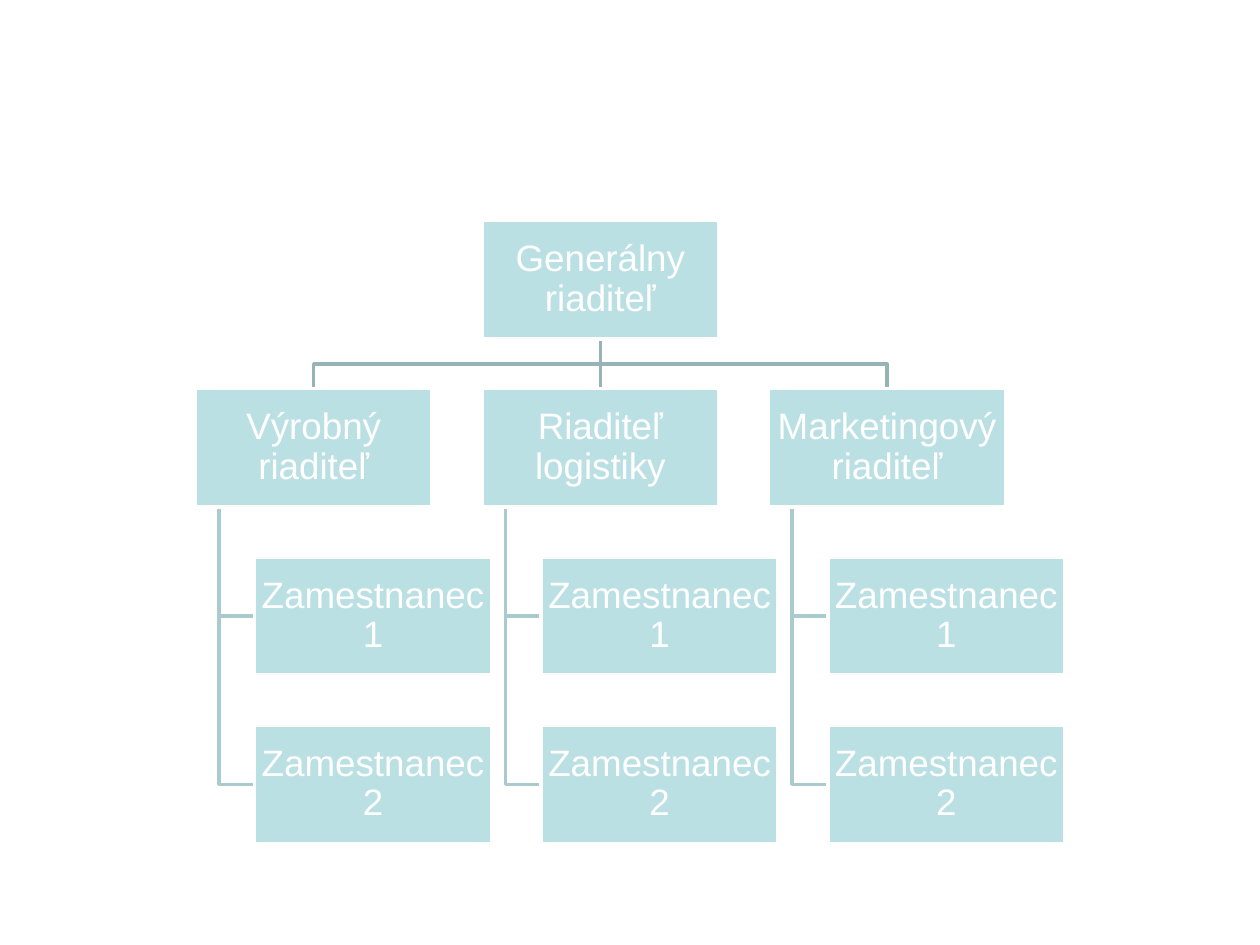
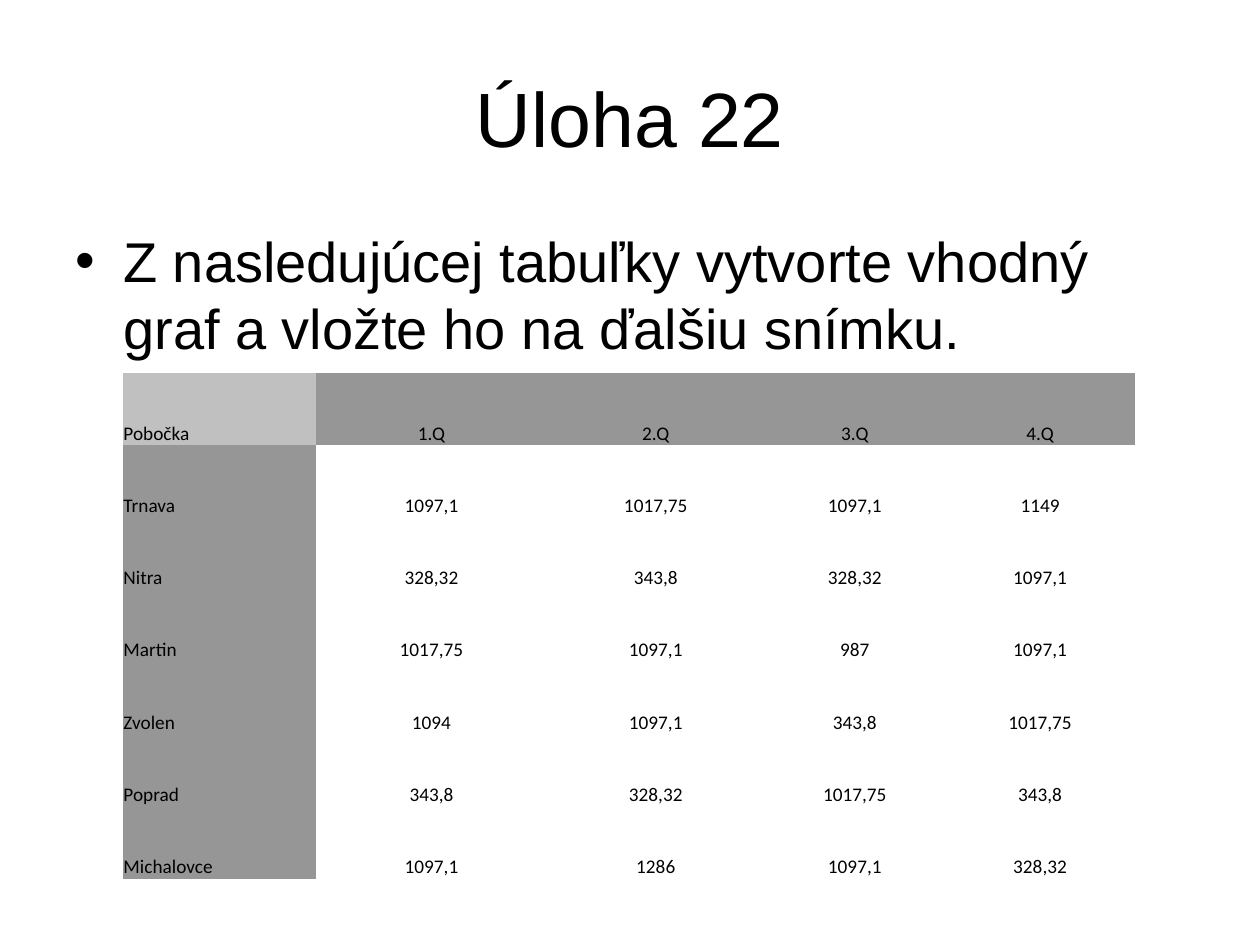
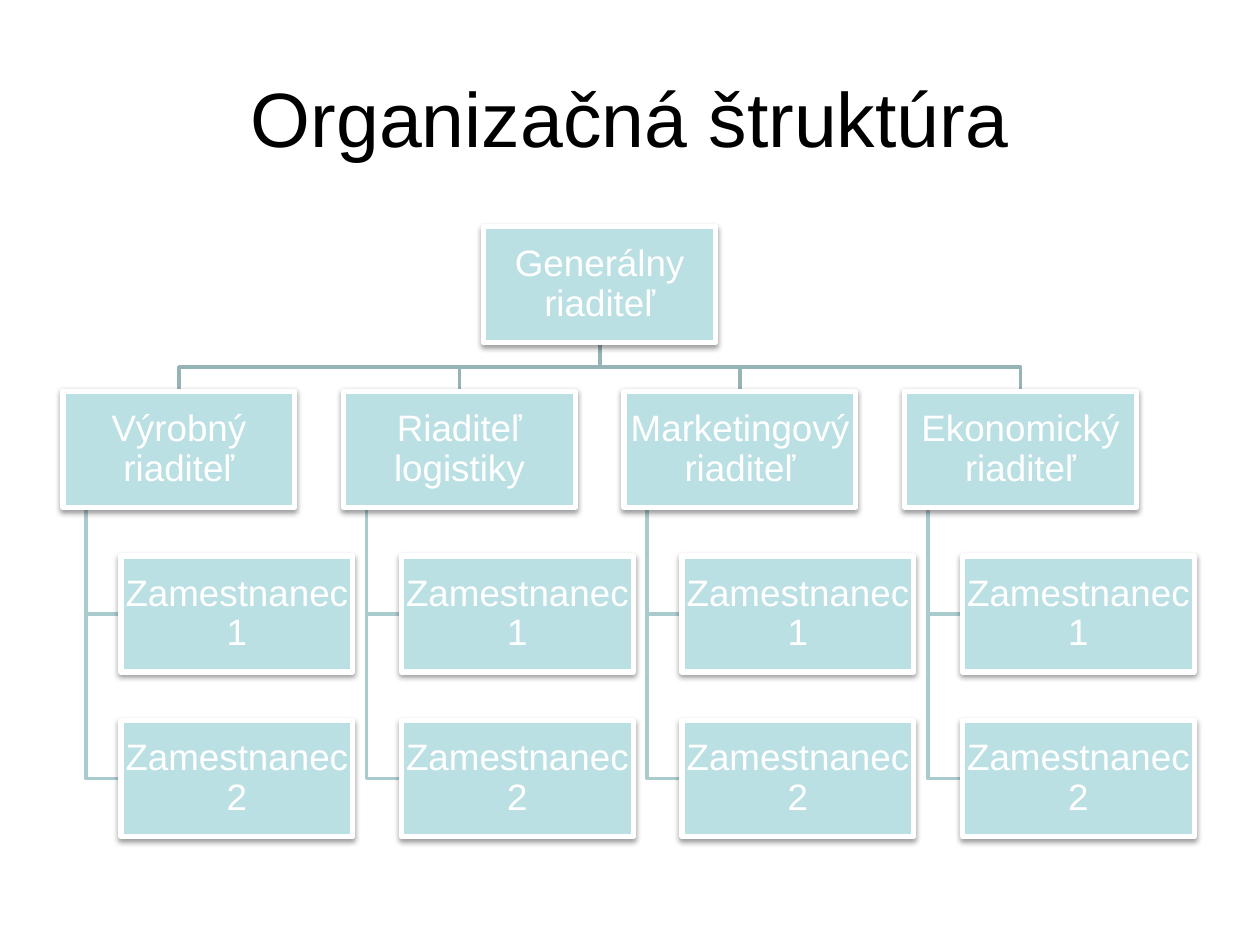
from lxml import etree
from pptx import Presentation
from pptx.dml.color import RGBColor
from pptx.enum.shapes import MSO_CONNECTOR, MSO_SHAPE
from pptx.enum.text import MSO_ANCHOR, MSO_AUTO_SIZE, PP_ALIGN
from pptx.oxml.ns import qn
from pptx.util import Inches, Pt

BLACK = RGBColor(0x00, 0x00, 0x00)
WHITE = RGBColor(0xFF, 0xFF, 0xFF)
BOX_FILL = RGBColor(0xBB, 0xE0, 0xE3)
MANAGER_LINE = RGBColor(0x96, 0xB3, 0xB6)
EMPLOYEE_LINE = RGBColor(0xAA, 0xCB, 0xCE)
HEADER_GREY = RGBColor(0x96, 0x96, 0x96)
CORNER_GREY = RGBColor(0xC0, 0xC0, 0xC0)

TITLE_ONLY, BLANK = 5, 6
PLAIN_TABLE_STYLE = "{2D5ABB26-0587-4C30-8999-92F81FD0307C}"

DIRECTOR = "Generálny riaditeľ"
MANAGERS = ["Výrobný riaditeľ", "Riaditeľ logistiky", "Marketingový riaditeľ",
            "Ekonomický riaditeľ"]
EMPLOYEES = ["Zamestnanec 1", "Zamestnanec 2"]

COLUMN_WIDTHS = [1.53, 1.83, 1.73, 1.43, 1.51]
SALES = [
    ["Pobočka", "1.Q", "2.Q", "3.Q", "4.Q"],
    ["Trnava", "1097,1", "1017,75", "1097,1", "1149"],
    ["Nitra", "328,32", "343,8", "328,32", "1097,1"],
    ["Martin", "1017,75", "1097,1", "987", "1097,1"],
    ["Zvolen", "1094", "1097,1", "343,8", "1017,75"],
    ["Poprad", "343,8", "328,32", "1017,75", "343,8"],
    ["Michalovce", "1097,1", "1286", "1097,1", "328,32"],
]


class Deck:
    def __init__(self):
        self.presentation = Presentation()
        self.presentation.slide_width = Inches(10)
        self.presentation.slide_height = Inches(7.5)
        self.slide = None

    def add_slide(self, title=None):
        layout = self.presentation.slide_layouts[TITLE_ONLY if title else BLANK]
        self.slide = self.presentation.slides.add_slide(layout)
        if title:
            shape = self.slide.shapes.title
            shape.left, shape.top = Inches(0.5), Inches(0.3)
            shape.width, shape.height = Inches(9), Inches(1.25)
            frame = shape.text_frame
            frame.auto_size = MSO_AUTO_SIZE.NONE
            frame.vertical_anchor = MSO_ANCHOR.MIDDLE
            self.add_text(frame, title, 44, align=PP_ALIGN.CENTER)

    def add_text(self, frame, text, size, color=BLACK, font="Arial", align=PP_ALIGN.LEFT):
        paragraph = frame.paragraphs[0]
        paragraph.alignment = align
        run = paragraph.add_run()
        run.text = text
        run.font.name = font
        run.font.size = Pt(size)
        run.font.color.rgb = color
        return paragraph

    def bullet(self, text, left, top, width, height):
        shape = self.slide.shapes.add_textbox(
            Inches(left), Inches(top), Inches(width), Inches(height))
        shape.text_frame.word_wrap = True
        paragraph = self.add_text(shape.text_frame, text, 32)
        paragraph.space_before = Pt(6.4)
        properties = paragraph._p.get_or_add_pPr()
        properties.set("marL", str(Inches(0.38)))
        properties.set("indent", str(Inches(-0.38)))
        etree.SubElement(properties, qn("a:buFont"), typeface="Arial")
        etree.SubElement(properties, qn("a:buChar"), char="•")

    def box(self, text, left, top, width, height, border, shadow):
        shape = self.slide.shapes.add_shape(
            MSO_SHAPE.RECTANGLE, Inches(left), Inches(top), Inches(width), Inches(height))
        shape.fill.solid()
        shape.fill.fore_color.rgb = BOX_FILL
        shape.line.color.rgb = WHITE
        shape.line.width = Pt(border)
        shape.shadow.inherit = False
        if shadow:
            self.drop_shadow(shape)
        frame = shape.text_frame
        frame.word_wrap = True
        frame.vertical_anchor = MSO_ANCHOR.MIDDLE
        frame.margin_left = frame.margin_right = Inches(0.01)
        frame.margin_top = frame.margin_bottom = Inches(0.01)
        self.add_text(frame, text, 21, WHITE, align=PP_ALIGN.CENTER).line_spacing = 0.9

    def drop_shadow(self, shape):
        effects = shape._element.spPr.find(qn("a:effectLst"))
        outer = etree.SubElement(effects, qn("a:outerShdw"), blurRad="40000", dist="20000",
                                 dir="5400000", rotWithShape="0")
        color = etree.SubElement(outer, qn("a:srgbClr"), val=str(BLACK))
        etree.SubElement(color, qn("a:alpha"), val="38000")

    def branch(self, points, color):
        """Draw an open line through the points, a connector if it is straight."""
        corners = [(Inches(x), Inches(y)) for x, y in points]
        if len({x for x, _ in corners}) == 1:
            shape = self.slide.shapes.add_connector(
                MSO_CONNECTOR.STRAIGHT, *corners[0], *corners[-1])
            etree.SubElement(shape._element.spPr, qn("a:effectLst"))
        else:
            builder = self.slide.shapes.build_freeform(*corners[0])
            builder.add_line_segments(corners[1:], close=False)
            shape = builder.convert_to_shape()
            shape.fill.background()
            shape.shadow.inherit = False
        shape.line.color.rgb = color
        shape.line.width = Pt(2)

    def organization_chart(self, managers, left, top, width, border, shadow=False):
        """Draw the director, a row of managers and the employees below each."""
        height = width / 2
        column_step, row_step = 1.21 * width, 1.42 * height
        rows = [top + i * row_step for i in range(2 + len(EMPLOYEES))]
        columns = [left + i * column_step for i in range(len(managers))]
        director_left = (columns[0] + columns[-1]) / 2
        director_x = director_left + width / 2
        director_bottom = top + height
        middle = (director_bottom + rows[1]) / 2

        boxes = [(DIRECTOR, director_left, top)]
        for manager, column in zip(managers, columns):
            manager_x = column + width / 2
            self.branch([(director_x, director_bottom), (director_x, middle),
                         (manager_x, middle), (manager_x, rows[1])], MANAGER_LINE)
            boxes.append((manager, column, rows[1]))
            trunk, employee_left = column + width / 10, column + width / 4
            for employee, row in zip(EMPLOYEES, rows[2:]):
                row_middle = row + height / 2
                self.branch([(trunk, rows[1] + height), (trunk, row_middle),
                             (employee_left, row_middle)], EMPLOYEE_LINE)
                boxes.append((employee, employee_left, row))
        for text, box_left, box_top in boxes:
            self.box(text, box_left, box_top, width, height, border, shadow)

    def table(self, rows, column_widths, left, top, height):
        table = self.slide.shapes.add_table(
            len(rows), len(column_widths), Inches(left), Inches(top),
            Inches(sum(column_widths)), Inches(height)).table
        table.first_row = table.horz_banding = False
        table._tbl.tblPr.find(qn("a:tableStyleId")).text = PLAIN_TABLE_STYLE
        for column, width in zip(table.columns, column_widths):
            column.width = Inches(width)
        for i, row in enumerate(rows):
            for j, text in enumerate(row):
                cell = table.cell(i, j)
                cell.margin_left = cell.margin_right = 0
                cell.margin_top = cell.margin_bottom = 0
                cell.vertical_anchor = MSO_ANCHOR.BOTTOM
                if i and j:
                    cell.fill.background()
                else:
                    cell.fill.solid()
                    cell.fill.fore_color.rgb = HEADER_GREY if i or j else CORNER_GREY
                self.add_text(cell.text_frame, text, 11, font="Calibri",
                              align=PP_ALIGN.CENTER if j else PP_ALIGN.LEFT)


def main():
    deck = Deck()

    deck.add_slide()
    deck.organization_chart(MANAGERS[:3], left=1.55, top=1.75, width=1.88, border=2)

    deck.add_slide("Úloha 22")
    deck.bullet("Z nasledujúcej tabuľky vytvorte vhodný graf a vložte ho na ďalšiu snímku.",
                0.5, 1.75, 9, 4.95)
    deck.table(SALES, COLUMN_WIDTHS, left=0.98, top=2.96, height=4.02)

    deck.add_slide("Organizačná štruktúra")
    deck.organization_chart(MANAGERS, left=0.5, top=1.8, width=1.84, border=3, shadow=True)

    deck.presentation.save("out.pptx")


if __name__ == "__main__":
    main()
